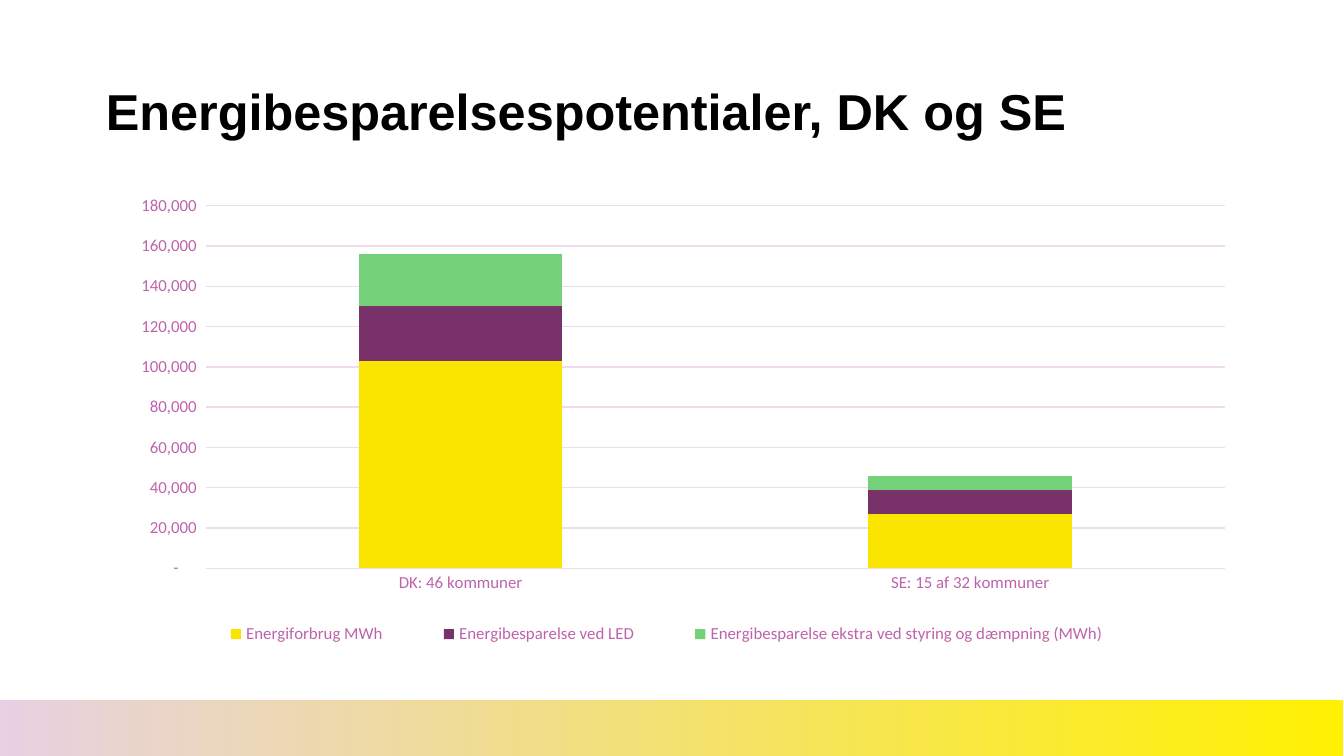
from dataclasses import dataclass

from lxml import etree
from pptx import Presentation
from pptx.chart.data import CategoryChartData
from pptx.dml.color import RGBColor
from pptx.enum.chart import XL_CHART_TYPE as ChartType
from pptx.enum.chart import XL_LEGEND_POSITION as LegendPosition
from pptx.enum.chart import XL_TICK_MARK as TickMark
from pptx.enum.shapes import MSO_SHAPE as Shape
from pptx.enum.text import MSO_ANCHOR as Anchor
from pptx.enum.text import MSO_AUTO_SIZE as AutoSize
from pptx.enum.text import PP_ALIGN as Align
from pptx.oxml.ns import qn
from pptx.util import Pt

EMU_PER_PX = 9525  # 96 px to the inch


@dataclass(frozen=True)
class Theme:
    title_font: str = "Arial"
    chart_font: str = "Calibri"
    title_size: int = 27
    chart_size: int = 10
    label_size: int = 9
    title: str = "000000"
    chart_text: str = "783269"
    label: str = "BE63AA"
    grid: str = "F0DBEC"
    band: tuple = ("E7D1E2", "FFF101")


THEME = Theme()
CATEGORIES = ["DK: 46 kommuner", "SE: 15 af 32 kommuner"]
# Name, values in MWh, colour
SERIES = [
    ("Energiforbrug MWh", (103000, 27000), "FAE500"),
    ("Energibesparelse ved LED", (27000, 12000), "783269"),
    ("Energibesparelse ekstra ved styring og dæmpning (MWh)", (26000, 7000), "75D179"),
]
NUMBER_FORMAT = r'_ * #,##0_ ;_ * \-#,##0_ ;_ * "-"??_ ;_ '

# Left, top, width, height in px; plot and legend are measured inside the chart
CHART_BOX = (34, 96, 884, 423)
PLOT_BOX = (113, 51, 728, 259)
LEGEND_BOX = (91, 342, 702, 30)


def px(*lengths):
    return [length * EMU_PER_PX for length in lengths]


def color(code):
    return RGBColor.from_string(code)


def style_font(font, name, size, code):
    font.name, font.size = name, Pt(size)
    font.color.rgb = color(code)


def style_line(line):
    line.color.rgb = color(THEME.grid)
    line.width = Pt(0.75)


def add_band(page):
    band = page.shapes.add_shape(Shape.RECTANGLE, *px(-1, 500, 960, 40))
    band.shadow.inherit = False
    band.line.fill.background()
    band.fill.gradient()
    band.fill.gradient_angle = 0
    for stop, code in zip(band.fill.gradient_stops, THEME.band):
        stop.color.rgb = color(code)


def set_title(page, text):
    title = page.shapes.title
    title.left, title.top, title.width, title.height = px(66, 29, 828, 105)
    frame = title.text_frame
    frame.text = text
    frame.word_wrap = True
    frame.auto_size = AutoSize.NONE
    frame.vertical_anchor = Anchor.MIDDLE
    para = frame.paragraphs[0]
    para.alignment = Align.LEFT
    para.line_spacing = 0.9
    para.font.bold = True
    style_font(para.font, THEME.title_font, THEME.title_size, THEME.title)


def place_part(part, index, box, target=None):
    """Fix a chart part's place, written as fractions of the chart."""
    for old in part.findall(qn("c:layout")):
        part.remove(old)
    layout = etree.Element(qn("c:layout"))
    manual = etree.SubElement(layout, qn("c:manualLayout"))
    settings = {"layoutTarget": target} if target else {}
    settings.update(xMode="edge", yMode="edge")
    for tag, length, whole in zip("xywh", box, CHART_BOX[2:] * 2):
        settings[tag] = length / whole
    for tag, value in settings.items():
        etree.SubElement(manual, qn("c:" + tag)).set("val", str(value))
    part.insert(index, layout)


def style_axes(chart):
    for axis in (chart.category_axis, chart.value_axis):
        axis.major_tick_mark = axis.minor_tick_mark = TickMark.NONE
        style_font(axis.tick_labels.font, THEME.chart_font, THEME.label_size, THEME.label)
    style_line(chart.category_axis.format.line)

    values = chart.value_axis
    values.minimum_scale, values.maximum_scale, values.major_unit = 0, 180000, 20000
    values.format.line.fill.background()
    values.has_major_gridlines = True
    style_line(values.major_gridlines.format.line)
    values.tick_labels.number_format = NUMBER_FORMAT
    values.tick_labels.number_format_is_linked = False


def add_legend(chart):
    chart.has_legend = True
    legend = chart.legend
    legend.position = LegendPosition.BOTTOM
    legend.include_in_layout = False
    style_font(legend.font, THEME.chart_font, THEME.label_size, THEME.label)
    place_part(chart.element.find(".//" + qn("c:legend")), 1, LEGEND_BOX)


def add_energy_chart(page):
    data = CategoryChartData(number_format=NUMBER_FORMAT)
    data.categories = CATEGORIES
    for name, values, _ in SERIES:
        data.add_series(name, values)
    chart = page.shapes.add_chart(ChartType.COLUMN_STACKED, *px(*CHART_BOX), data).chart
    chart.has_title = False
    style_font(chart.font, THEME.chart_font, THEME.chart_size, THEME.chart_text)

    # Stacked columns
    plot = chart.plots[0]
    plot.gap_width, plot.overlap = 150, 100
    plot.vary_by_categories = False
    for series, (_, _, code) in zip(plot.series, SERIES):
        series.format.fill.solid()
        series.format.fill.fore_color.rgb = color(code)

    style_axes(chart)
    place_part(chart.element.find(".//" + qn("c:plotArea")), 0, PLOT_BOX, "inner")
    add_legend(chart)


def main():
    deck = Presentation()
    deck.slide_width, deck.slide_height = px(960, 540)
    page = deck.slides.add_slide(deck.slide_layouts[5])
    add_band(page)
    set_title(page, "Energibesparelsespotentialer, DK og SE")
    add_energy_chart(page)
    deck.save("out.pptx")


if __name__ == "__main__":
    main()
